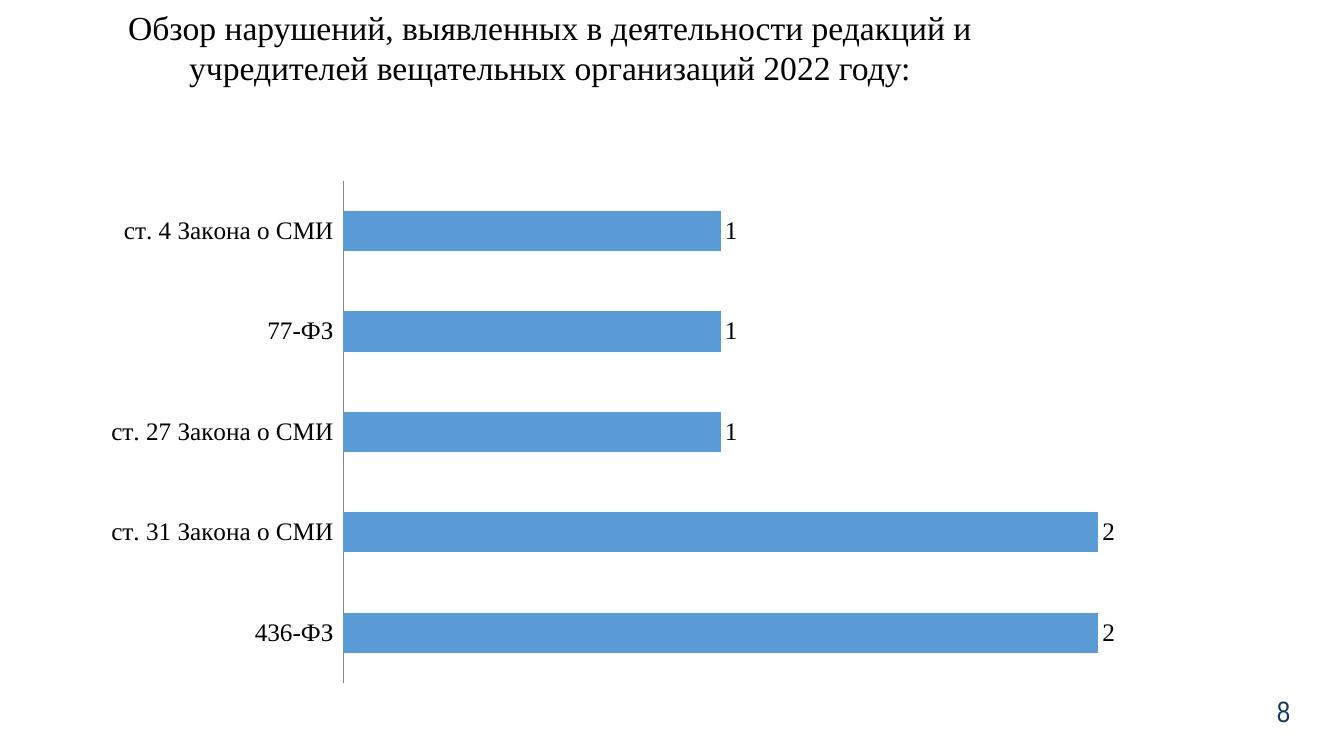
"""Build the slide on violations found among broadcasters in 2022."""
from lxml.etree import SubElement
from pptx import Presentation
from pptx.chart.data import CategoryChartData
from pptx.dml.color import RGBColor
from pptx.enum.chart import XL_CHART_TYPE as ChartType, XL_LABEL_POSITION as LabelPos
from pptx.enum.chart import XL_TICK_LABEL_POSITION as TickPos, XL_TICK_MARK as Tick
from pptx.enum.text import MSO_ANCHOR as Anchor, MSO_AUTO_SIZE as AutoSize, PP_ALIGN as Align
from pptx.oxml.ns import qn
from pptx.util import Pt

HEADING = "Обзор нарушений, выявленных в деятельности редакций и учредителей вещательных организаций 2022 году:"
PAGE = "8"
VIOLATIONS = {
    "436-ФЗ": 2,
    "ст. 31 Закона о СМИ": 2,
    "ст. 27 Закона о СМИ": 1,
    "77-ФЗ": 1,
    "ст. 4 Закона о СМИ": 1,
}
COLORS = {"text": "000000", "page": "17375E", "bar": "5B9BD5", "axis": "878787"}
SERIF = "Times New Roman"
HEADING_BOX = (49, 0, 687.6, 67.7)
PAGE_BOX = (704.9, 493.2, 223.9, 28.8)
CHART_BOX = (67, 121.7, 869.8, 373.7)
PLOT_SHARE = {"x": 0.205, "y": 0.02, "w": 0.775, "h": 0.96}


def color(name):
    return RGBColor.from_string(COLORS[name])


def apply(target, **values):
    for key, value in values.items():
        setattr(target, key, value)


def place(box):
    return dict(zip(("left", "top", "width", "height"), map(Pt, box)))


def style(font, name, size, tint):
    apply(font, name=name, size=Pt(size), bold=False)
    font.color.rgb = color(tint)


def write(shape, words, align, anchor, inset, font):
    frame = shape.text_frame
    side, edge = map(Pt, inset)
    apply(frame, text=words, word_wrap=True, auto_size=AutoSize.NONE, vertical_anchor=anchor,
          margin_left=side, margin_right=side, margin_top=edge, margin_bottom=edge)
    line = frame.paragraphs[0]
    line.alignment = align
    style(line.runs[0].font, *font)


def add_violations(slide):
    counts = CategoryChartData(number_format="General")
    counts.categories = list(VIOLATIONS)
    counts.add_series("Series 1", list(VIOLATIONS.values()))
    left, top, width, height = map(Pt, CHART_BOX)
    chart = slide.shapes.add_chart(ChartType.BAR_CLUSTERED, left, top, width, height, counts).chart
    apply(chart, has_legend=False, has_title=False)
    style(chart.font, "Calibri", 18, "text")

    laws, scale = chart.category_axis, chart.value_axis
    apply(laws, major_tick_mark=Tick.NONE, minor_tick_mark=Tick.NONE,
          tick_label_position=TickPos.LOW, has_major_gridlines=False)
    style(laws.tick_labels.font, SERIF, 18, "text")
    laws.format.line.color.rgb = color("axis")
    laws.format.line.width = Pt(0.75)
    apply(scale, visible=False, has_major_gridlines=False, minimum_scale=0, maximum_scale=2.5)

    plot = chart.plots[0]
    apply(plot, gap_width=150, overlap=-25, vary_by_categories=False, has_data_labels=True)
    apply(plot.data_labels, show_value=True, position=LabelPos.OUTSIDE_END)
    style(plot.data_labels.font, SERIF, 18, "text")
    bars = plot.series[0].format.fill
    bars.solid()
    bars.fore_color.rgb = color("bar")

    area = chart.element.find(".//" + qn("c:plotArea"))
    layout = area.find(qn("c:layout"))
    if layout is None:
        layout = SubElement(area, qn("c:layout"))
        area.insert(0, layout)
    manual = SubElement(layout, qn("c:manualLayout"))
    modes = {"layoutTarget": "inner", "xMode": "edge", "yMode": "edge"}
    for tag, value in {**modes, **PLOT_SHARE}.items():
        SubElement(manual, qn("c:" + tag)).set("val", str(value))


def main():
    deck = Presentation()
    apply(deck, slide_width=Pt(960), slide_height=Pt(540))
    slide = deck.slides.add_slide(deck.slide_layouts[5])
    heading = slide.shapes.title
    apply(heading, **place(HEADING_BOX))
    write(heading, HEADING, Align.CENTER, Anchor.TOP, (9.4, 5), (SERIF, 24, "text"))
    page = slide.shapes.add_textbox(*map(Pt, PAGE_BOX))
    write(page, PAGE, Align.RIGHT, Anchor.MIDDLE, (7.2, 3.6), ("Arial Narrow", 21, "page"))
    add_violations(slide)
    deck.save("out.pptx")


if __name__ == "__main__":
    main()
